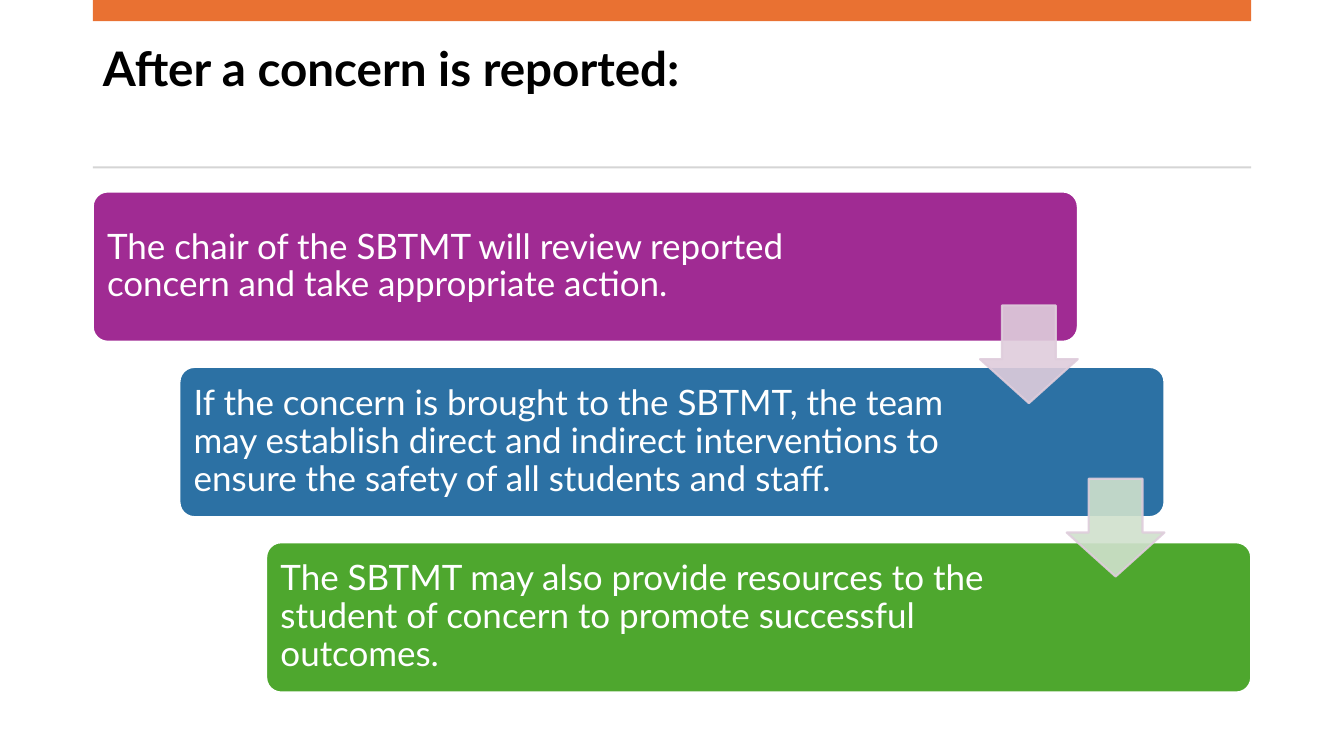
from pptx import Presentation
from pptx.dml.color import RGBColor
from pptx.enum.shapes import MSO_SHAPE
from pptx.enum.text import MSO_ANCHOR, PP_ALIGN
from pptx.oxml.ns import qn
from pptx.util import Pt
from lxml import etree

RECT, ROUND, ARROW = MSO_SHAPE.RECTANGLE, MSO_SHAPE.ROUNDED_RECTANGLE, MSO_SHAPE.DOWN_ARROW
TOP, MIDDLE, LEFT = MSO_ANCHOR.TOP, MSO_ANCHOR.MIDDLE, PP_ALIGN.LEFT
PX = 9144  # 100 px to the inch

THEME = {
    "font": "Lato", "title": 34, "body": 25, "edge": 1.5,
    "black": "000000", "white": "FFFFFF", "bar": "E97132", "rule": "D5D5D5",
    "cards": ["A02B93", "2C71A4", "4EA72E"],
    "arrows": ["DFCDDC", "D0E1CD"], "rim": "DFCDDC",
}
STEPS = [  # wording, right margin
    ("The chair of the SBTMT will review reported concern and take appropriate action.", 163),
    ("If the concern is brought to the SBTMT, the team may establish direct and indirect "
     "interventions to ensure the safety of all students and staff.", 194),
    ("The SBTMT may also provide resources to the student of concern to promote "
     "successful outcomes.", 194),
]


def add_block(kind, box, fill, edge=None):
    block = slide.shapes.add_shape(kind, *[n * PX for n in box])
    block.shadow.inherit = False
    block.fill.solid()
    block.fill.fore_color.rgb = RGBColor.from_string(fill)
    if edge:
        block.line.color.rgb = RGBColor.from_string(edge)
        block.line.width = Pt(THEME["edge"])
    else:
        block.line.fill.background()
    return block


def set_text(shape, text, size, color, bold, anchor, insets):
    frame = shape.text_frame
    frame.text = text
    frame.word_wrap = True
    frame.vertical_anchor = anchor
    (frame.margin_left, frame.margin_top,
     frame.margin_right, frame.margin_bottom) = [n * PX for n in insets]
    para = frame.paragraphs[0]
    para.alignment = LEFT
    para.line_spacing = 0.9
    para.font.name = THEME["font"]
    para.font.size = Pt(size)
    para.font.bold = bold
    para.font.color.rgb = RGBColor.from_string(color)


deck = Presentation()
deck.slide_width, deck.slide_height = 1333 * PX, 750 * PX
slide = deck.slides.add_slide(deck.slide_layouts[5])

# Title
title = slide.shapes.title
title.left, title.top, title.width, title.height = [n * PX for n in (92, 37, 1149, 118)]
set_text(title, "After a concern is reported:", THEME["title"], THEME["black"],
         True, TOP, (10, 8, 10, 5))

# Top bar and rule
add_block(RECT, (92, 0, 1149, 21), THEME["bar"])
add_block(RECT, (92, 165, 1149, 2), THEME["rule"])

# Staggered step cards
for i, (text, right) in enumerate(STEPS):
    card = add_block(ROUND, (92 + 86 * i, 190 + 174 * i, 977, 149),
                     THEME["cards"][i], THEME["white"])
    card.adjustments[0] = 0.1
    set_text(card, text, THEME["body"], THEME["white"], False, MIDDLE, (10, 10, right, 10))

# Translucent arrows between the cards
for i, fill in enumerate(THEME["arrows"]):
    arrow = add_block(ARROW, (972 + 86 * i, 303 + 172 * i, 97, 97), fill, THEME["rim"])
    arrow.adjustments[0], arrow.adjustments[1] = 0.55, 0.45
    for color in arrow.element.spPr.iter(qn("a:srgbClr")):
        etree.SubElement(color, qn("a:alpha"), val="90000")

deck.save("out.pptx")
